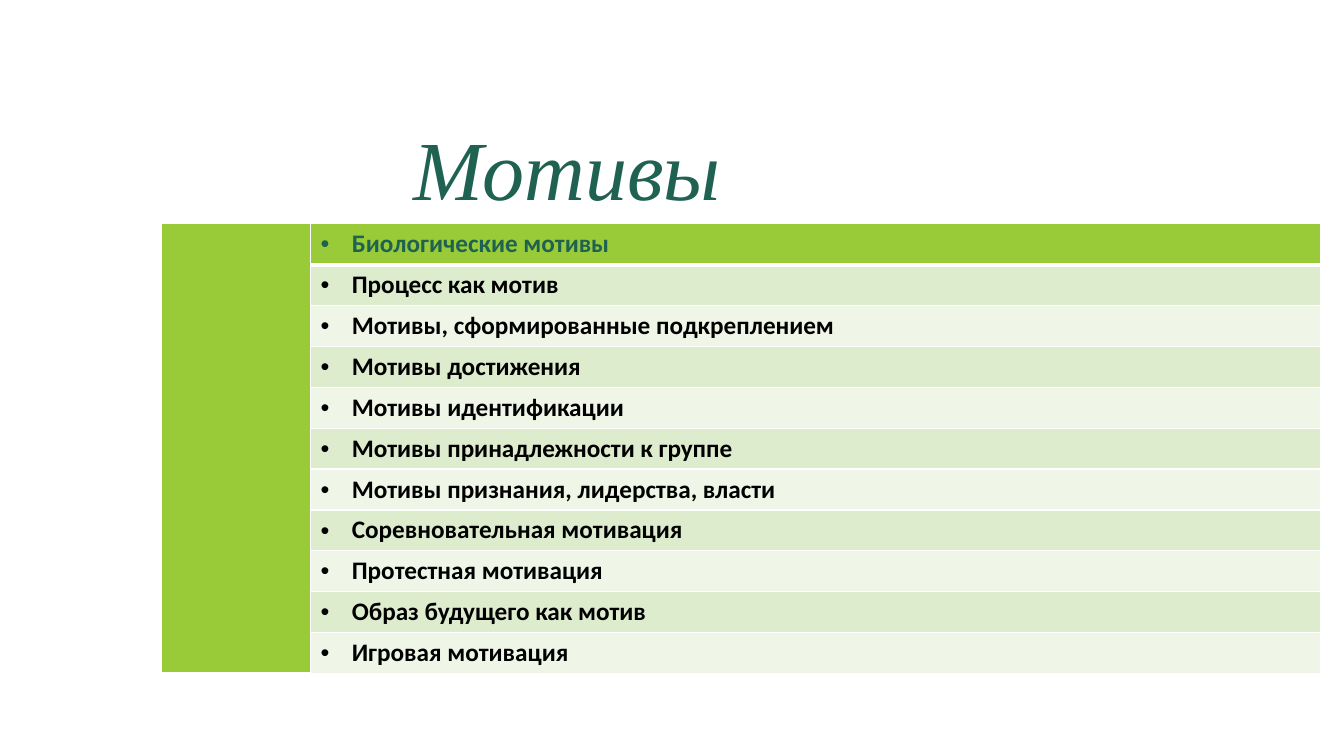
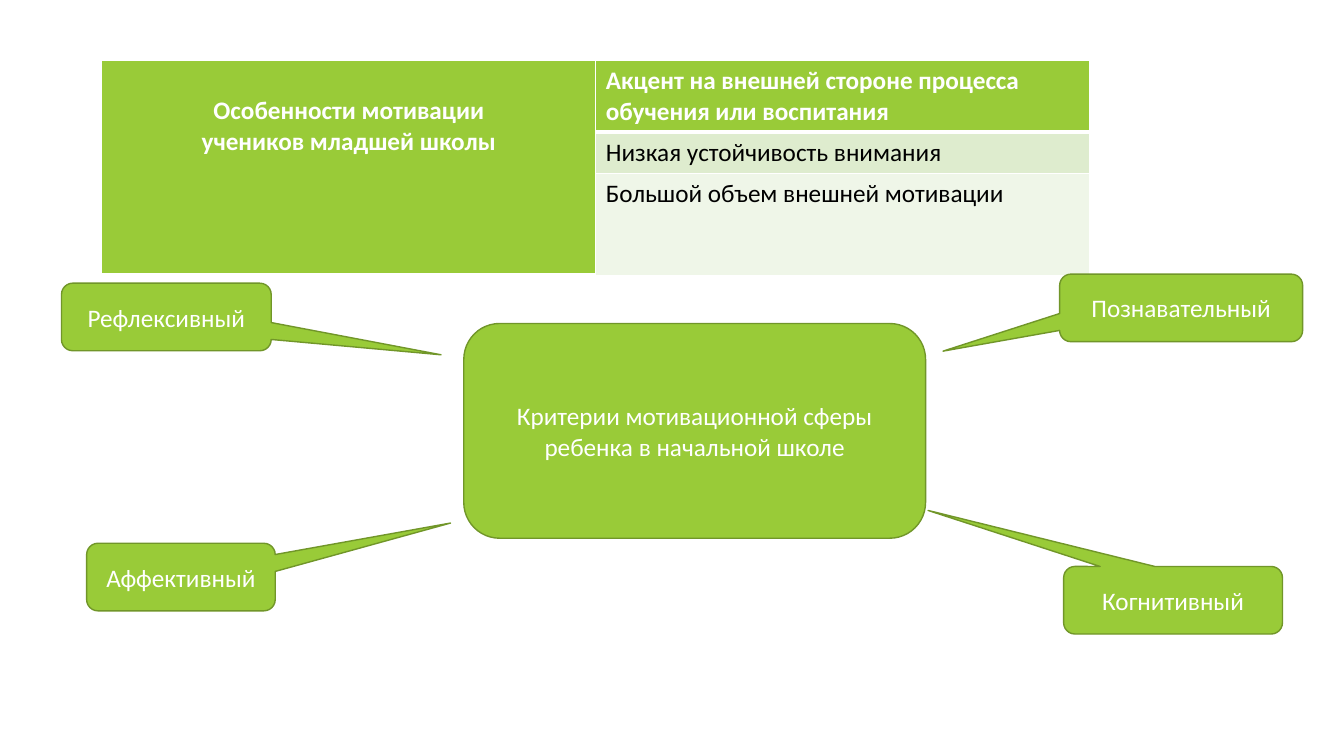
from pptx import Presentation
from pptx import util as u
from pptx.dml.color import RGBColor
from pptx.enum import shapes, text
from pptx.oxml import parse_xml
from pptx.oxml.ns import nsdecls

GREEN = RGBColor(0x99, 0xCB, 0x38)
EDGE = RGBColor(0x71, 0x96, 0x29)
TEAL = RGBColor(0x20, 0x62, 0x52)
WHITE = RGBColor(0xFF, 0xFF, 0xFF)
BLACK = RGBColor(0, 0, 0)
BANDS = RGBColor(0xEF, 0xF6, 0xE8), RGBColor(0xDE, 0xEC, 0xCE)
SANS, SERIF = "Calibri", "Times New Roman"
LEFT, MID = text.PP_ALIGN.LEFT, text.PP_ALIGN.CENTER

# Content: lengths in px, 100 px to the inch
TITLE = "Мотивы"
MOTIVES = [
    "Биологические мотивы",
    "Процесс как мотив",
    "Мотивы, сформированные подкреплением",
    "Мотивы достижения",
    "Мотивы идентификации",
    "Мотивы принадлежности к группе",
    "Мотивы признания, лидерства, власти",
    "Соревновательная мотивация",
    "Протестная мотивация",
    "Образ будущего как мотив",
    "Игровая мотивация",
]
TRAITS_HEAD = ["Особенности мотивации", "учеников младшей школы"]
TRAITS = [
    "Акцент на внешней стороне процесса обучения или воспитания",
    "Низкая устойчивость внимания",
    "Большой объем внешней мотивации",
]
CORE = "Критерии мотивационной сферы ребенка в начальной школе"
# Text, box, tip of the pointer as a share of the box size
CALLOUTS = [
    ("Рефлексивный", (61, 281, 208, 67), (1.31, 0.56)),
    ("Познавательный", (1051, 272, 241, 67), (-0.98, 0.64)),
    ("Когнитивный", (1055, 562, 217, 67), (-1.12, -1.33)),
    ("Аффективный", (86, 539, 187, 67), (1.43, -0.8)),
]


def px(n):
    return u.Emu(round(n * 9144))


def box(*sides):
    return [px(n) for n in sides]


def write(frame, lines, color, size=18, face=SANS, bold=False,
          italic=False, align=LEFT, bullet=False):
    frame.word_wrap = True
    for i, line in enumerate(lines):
        para = frame.add_paragraph() if i else frame.paragraphs[0]
        para.text = line
        if bullet:
            props = para._p.get_or_add_pPr()
            props.set("marL", str(px(31)))
            props.set("indent", str(px(-31)))
            props.append(parse_xml(f'<a:buFont {nsdecls("a")} typeface="Arial"/>'))
            props.append(parse_xml(f'<a:buChar {nsdecls("a")} char="•"/>'))
        para.alignment = align
        font = para.font
        font.size, font.name = u.Pt(size), face
        font.bold, font.italic = bold, italic
        font.color.rgb = color


def paint(cell, color, base):
    """Fill a cell and rule it in white, with a base line of the given width."""
    props = cell._tc.get_or_add_tcPr()
    for side, width in zip("LRTB", (1, 1, 1, base)):
        props.append(parse_xml(
            f'<a:ln{side} {nsdecls("a")} w="{u.Pt(width)}"><a:solidFill>'
            f'<a:srgbClr val="{WHITE}"/></a:solidFill></a:ln{side}>'))
    cell.fill.solid()
    cell.fill.fore_color.rgb = color


def grid(slide, left, top, cols, rows, lines, head, **style):
    """Table with one tall head cell beside a banded list; returns that cell."""
    table = slide.shapes.add_table(
        len(rows), 2, *box(left, top, sum(cols), sum(rows))).table
    table.first_row = table.horz_banding = False
    for col, width in zip(table.columns, cols):
        col.width = px(width)
    for i, (row, high, line) in enumerate(zip(table.rows, rows, lines)):
        row.height = px(high)
        cell = table.cell(i, 1)
        paint(cell, BANDS[i % 2] if i else GREEN, 1 if i else 3)
        look = {"bold": i == 0} | style
        write(cell.text_frame, [line], BLACK if i else head, **look)
    tall = table.cell(0, 0)
    tall.merge(table.cell(len(rows) - 1, 0))
    paint(tall, GREEN, 3)
    return tall


def bubble(slide, kind, place, line):
    shape = slide.shapes.add_shape(kind, *box(*place))
    shape.shadow.inherit = False
    shape.fill.solid()
    shape.fill.fore_color.rgb = GREEN
    shape.line.color.rgb = EDGE
    shape.line.width = u.Pt(1)
    shape.text_frame.vertical_anchor = text.MSO_ANCHOR.MIDDLE
    write(shape.text_frame, [line], WHITE, align=MID)
    return shape


def motives(deck):
    slide = deck.slides.add_slide(deck.slide_layouts[5])
    title = slide.shapes.title
    title.left, title.top, title.width, title.height = box(229, 111, 667, 111)
    title.text_frame.vertical_anchor = text.MSO_ANCHOR.TOP
    write(title.text_frame, [TITLE], TEAL, 60, SERIF, italic=True, align=MID)
    count = len(MOTIVES)
    grid(slide, 160, 222, (148, 1002), [446 / count] * count, MOTIVES, TEAL,
         bold=True, bullet=True)


def criteria(deck):
    slide = deck.slides.add_slide(deck.slide_layouts[6])
    tall = grid(slide, 101, 60, (490, 490), (71, 41, 100), TRAITS, WHITE)
    tall.margin_top = px(35)
    write(tall.text_frame, TRAITS_HEAD, WHITE, bold=True, align=MID)

    # Core box and the callouts pointing at it
    kinds = shapes.MSO_SHAPE
    bubble(slide, kinds.ROUNDED_RECTANGLE, (460, 321, 458, 213), CORE)
    for line, place, tip in CALLOUTS:
        shape = bubble(slide, kinds.ROUNDED_RECTANGULAR_CALLOUT, place, line)
        shape.adjustments[0], shape.adjustments[1] = tip


def main():
    deck = Presentation()
    deck.slide_width, deck.slide_height = box(1333, 750)
    motives(deck)
    criteria(deck)
    deck.save("out.pptx")


if __name__ == "__main__":
    main()
